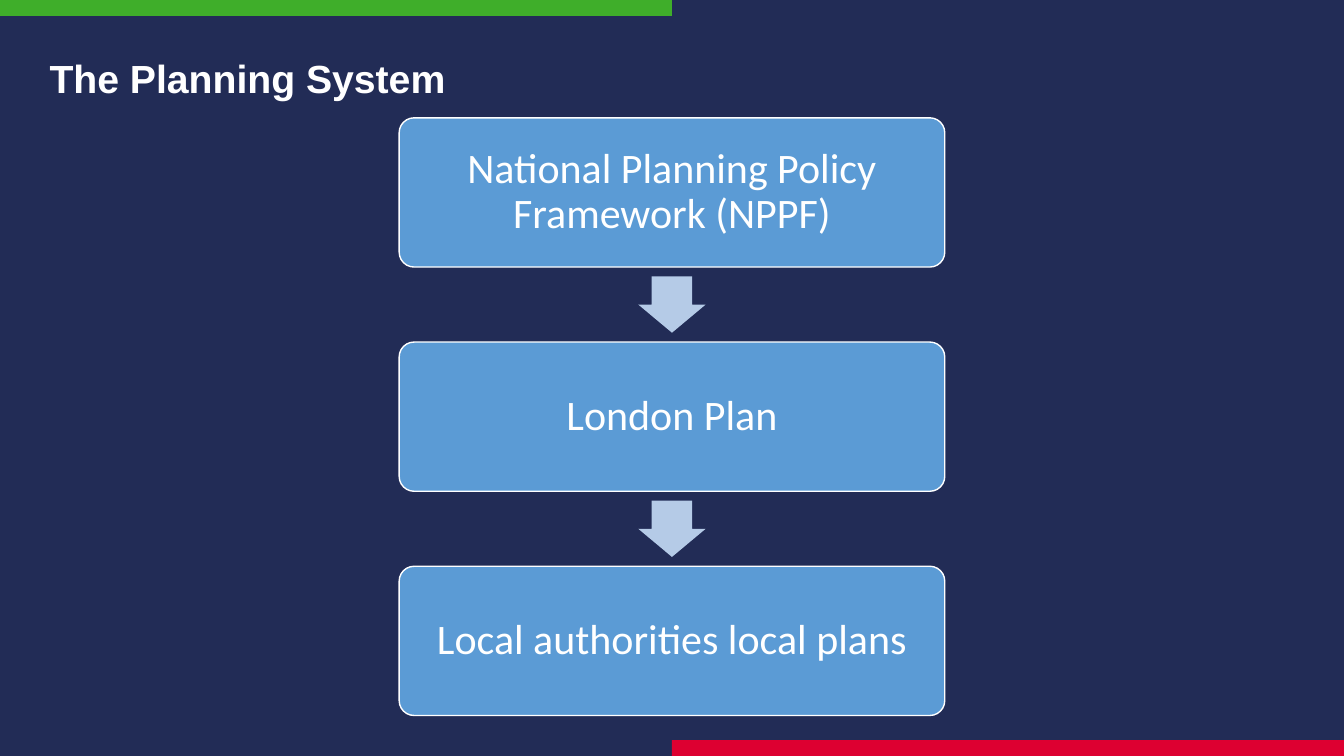
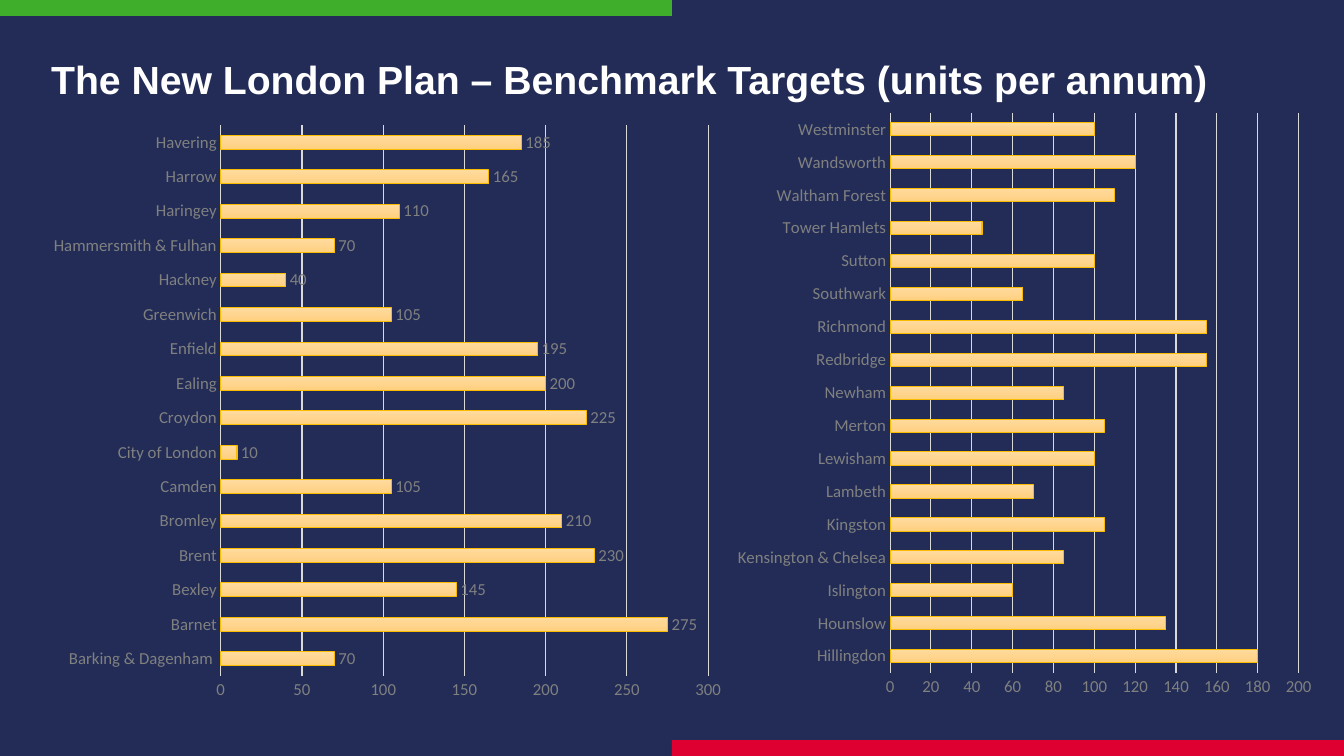
from copy import deepcopy
from dataclasses import dataclass

from pptx import Presentation
from pptx.chart.data import CategoryChartData
from pptx.dml.color import RGBColor
from pptx.enum.chart import XL_CHART_TYPE, XL_LABEL_POSITION, XL_TICK_MARK
from pptx.enum.shapes import MSO_SHAPE
from pptx.enum.text import MSO_ANCHOR, PP_ALIGN
from pptx.oxml import parse_xml
from pptx.oxml.ns import nsdecls, qn
from pptx.shapes.autoshape import Shape
from pptx.slide import Slide
from pptx.text.text import Font
from pptx.util import Cm, Pt

RECT = MSO_SHAPE.RECTANGLE
ROUND = MSO_SHAPE.ROUNDED_RECTANGLE
DOWN = MSO_SHAPE.DOWN_ARROW
BAR = XL_CHART_TYPE.BAR_CLUSTERED
OUTSIDE = XL_LABEL_POSITION.OUTSIDE_END
NO_TICK = XL_TICK_MARK.NONE
MIDDLE = MSO_ANCHOR.MIDDLE
CENTER = PP_ALIGN.CENTER

WIDE, HIGH = 33.87, 19.05
BAND = 0.4
NAVY, GREEN, RED, WHITE = "222C56", "3FAE2A", "DD0031", "FFFFFF"
BLUE, PALE = "5B9BD5", "B5CBE7"
GREY, GRID, GOLD = "808080", "D9D9D9", "F9BC00"
SHADES = ("FFDB9E", "FFD590", "FFD07C")
HEAD, BODY = "Arial", "Calibri"


@dataclass(frozen=True)
class Area:
    """A frame in centimetres."""
    left: float
    top: float
    width: float
    height: float

    def cm(self) -> tuple[Cm, Cm, Cm, Cm]:
        return Cm(self.left), Cm(self.top), Cm(self.width), Cm(self.height)


@dataclass(frozen=True)
class Graph:
    area: Area
    top: int
    step: int
    values: dict[str, int]
    labels: bool = False
    plot: tuple[float, float, float, float] | None = None


STEPS = ("National Planning Policy Framework (NPPF)", "London Plan",
         "Local authorities local plans")
GRAPHS = (
    Graph(Area(0.48, 2.59, 18.42, 15.27), 300, 50, {
        "Barking & Dagenham ": 70, "Barnet": 275, "Bexley": 145, "Brent": 230,
        "Bromley": 210, "Camden": 105, "City of London": 10, "Croydon": 225,
        "Ealing": 200, "Enfield": 195, "Greenwich": 105, "Hackney": 40,
        "Hammersmith & Fulhan": 70, "Haringey": 110, "Harrow": 165,
        "Havering": 185,
    }, labels=True, plot=(0.276, 0.037, 0.667, 0.909)),
    Graph(Area(18.29, 2.54, 15.06, 15.32), 200, 20, {
        "Hillingdon": 180, "Hounslow": 135, "Islington": 60,
        "Kensington & Chelsea": 85, "Kingston": 105, "Lambeth": 70,
        "Lewisham": 100, "Merton": 105, "Newham": 85, "Redbridge": 155,
        "Richmond": 155, "Southwark": 65, "Sutton": 100, "Tower Hamlets": 45,
        "Waltham Forest": 110, "Wandsworth": 120, "Westminster": 100,
    }),
)


def color(code: str) -> RGBColor:
    return RGBColor.from_string(code)


def style(font: Font, face: str, size: int, code: str, bold: bool = False) -> None:
    font.name, font.size, font.bold = face, Pt(size), bold
    font.color.rgb = color(code)


def block(slide: Slide, kind: MSO_SHAPE, area: Area, fill: str,
          line: str | None = None) -> Shape:
    shape = slide.shapes.add_shape(kind, *area.cm())
    shape.shadow.inherit = False
    shape.fill.solid()
    shape.fill.fore_color.rgb = color(fill)
    if line:
        shape.line.color.rgb = color(line)
        shape.line.width = Pt(1)
    else:
        shape.line.fill.background()
    return shape


def page(deck: Presentation, title: str, area: Area) -> Slide:
    """Add a slide with its background, bands and title."""
    slide = deck.slides.add_slide(deck.slide_layouts[6])
    slide.background.fill.solid()
    slide.background.fill.fore_color.rgb = color(NAVY)
    half = WIDE / 2
    block(slide, RECT, Area(0, 0, half, BAND), GREEN)
    block(slide, RECT, Area(half, HIGH - BAND, half, BAND), RED)
    frame = slide.shapes.add_textbox(*area.cm()).text_frame
    frame.word_wrap = True
    para = frame.paragraphs[0]
    para.line_spacing = 1.2
    run = para.add_run()
    run.text = title
    style(run.font, HEAD, 28, WHITE, True)
    return slide


def flow(slide: Slide) -> None:
    """Stack the step boxes with an arrow in each gap."""
    top, pitch, width, height = 2.97, 5.65, 13.75, 3.76
    wide, high = 1.7, 1.42
    for i, text in enumerate(STEPS):
        y = top + i * pitch
        box = block(slide, ROUND, Area((WIDE - width) / 2, y, width, height),
                    BLUE, WHITE)
        box.adjustments[0] = 0.1
        frame = box.text_frame
        frame.word_wrap = True
        frame.vertical_anchor = MIDDLE
        frame.margin_left = frame.margin_right = Cm(0.42)
        frame.margin_top = frame.margin_bottom = Cm(0.42)
        para = frame.paragraphs[0]
        para.alignment = CENTER
        para.line_spacing = 0.9
        run = para.add_run()
        run.text = text
        style(run.font, BODY, 30, WHITE)
        if i < len(STEPS) - 1:
            gap = pitch - height
            arrow = block(slide, DOWN, Area((WIDE - wide) / 2,
                          y + height + (gap - high) / 2, wide, high), PALE)
            arrow.adjustments[0], arrow.adjustments[1] = 0.6, 0.5


def shade(series) -> None:
    """Fill the bars with an even gradient from top to bottom."""
    fill = series.format.fill
    fill.gradient()
    fill.gradient_angle = 270
    stops = next(series.format.fill._xPr.iter(qn("a:gsLst")))
    stops.append(deepcopy(stops[-1]))
    for i, (stop, code) in enumerate(zip(fill.gradient_stops, SHADES)):
        stop.position = i / (len(SHADES) - 1)
        stop.color.rgb = color(code)
    series.format.line.color.rgb = color(GOLD)
    series.format.line.width = Pt(0.75)


def place(chart, plot: tuple[float, float, float, float]) -> None:
    """Fix the inner plot area as shares of the chart frame."""
    parts = "".join(f'<c:{tag} val="{val}"/>' for tag, val in zip("xywh", plot))
    node = parse_xml(
        f'<c:layout {nsdecls("c")}><c:manualLayout><c:layoutTarget val="inner"/>'
        f'<c:xMode val="edge"/><c:yMode val="edge"/>{parts}'
        '</c:manualLayout></c:layout>')
    area = chart._chartSpace.chart.plotArea
    for old in area.findall(qn("c:layout")):
        area.remove(old)
    area.insert(0, node)


def draw(slide: Slide, graph: Graph) -> None:
    data = CategoryChartData()
    data.categories = list(graph.values)
    data.add_series("Series 1", list(graph.values.values()))
    chart = slide.shapes.add_chart(BAR, *graph.area.cm(), data).chart
    chart.has_title = chart.has_legend = False
    style(chart.font, BODY, 10, "000000")
    for axis in (chart.category_axis, chart.value_axis):
        axis.major_tick_mark = axis.minor_tick_mark = NO_TICK
        axis.format.line.fill.background()
        style(axis.tick_labels.font, BODY, 12, GREY)
    scale = chart.value_axis
    scale.minimum_scale, scale.maximum_scale = 0, graph.top
    scale.major_unit = graph.step
    scale.has_major_gridlines = True
    rule = scale.major_gridlines.format.line
    rule.color.rgb = color(GRID)
    rule.width = Pt(0.75)
    bars = chart.plots[0]
    bars.gap_width = 150
    bars.vary_by_categories = False
    shade(bars.series[0])
    if graph.labels:
        bars.has_data_labels = True
        labels = bars.data_labels
        labels.show_value = True
        labels.position = OUTSIDE
        style(labels.font, BODY, 12, GREY)
    if graph.plot:
        place(chart, graph.plot)


def main() -> None:
    deck = Presentation()
    deck.slide_width, deck.slide_height = Cm(WIDE), Cm(HIGH)
    flow(page(deck, "The Planning System", Area(1, 1, 31.78, 1.55)))
    slide = page(deck, "The New London Plan – Benchmark Targets (units per annum)",
                 Area(1.04, 1.04, 31.78, 1.7))
    for graph in GRAPHS:
        draw(slide, graph)
    deck.save("out.pptx")


if __name__ == "__main__":
    main()
